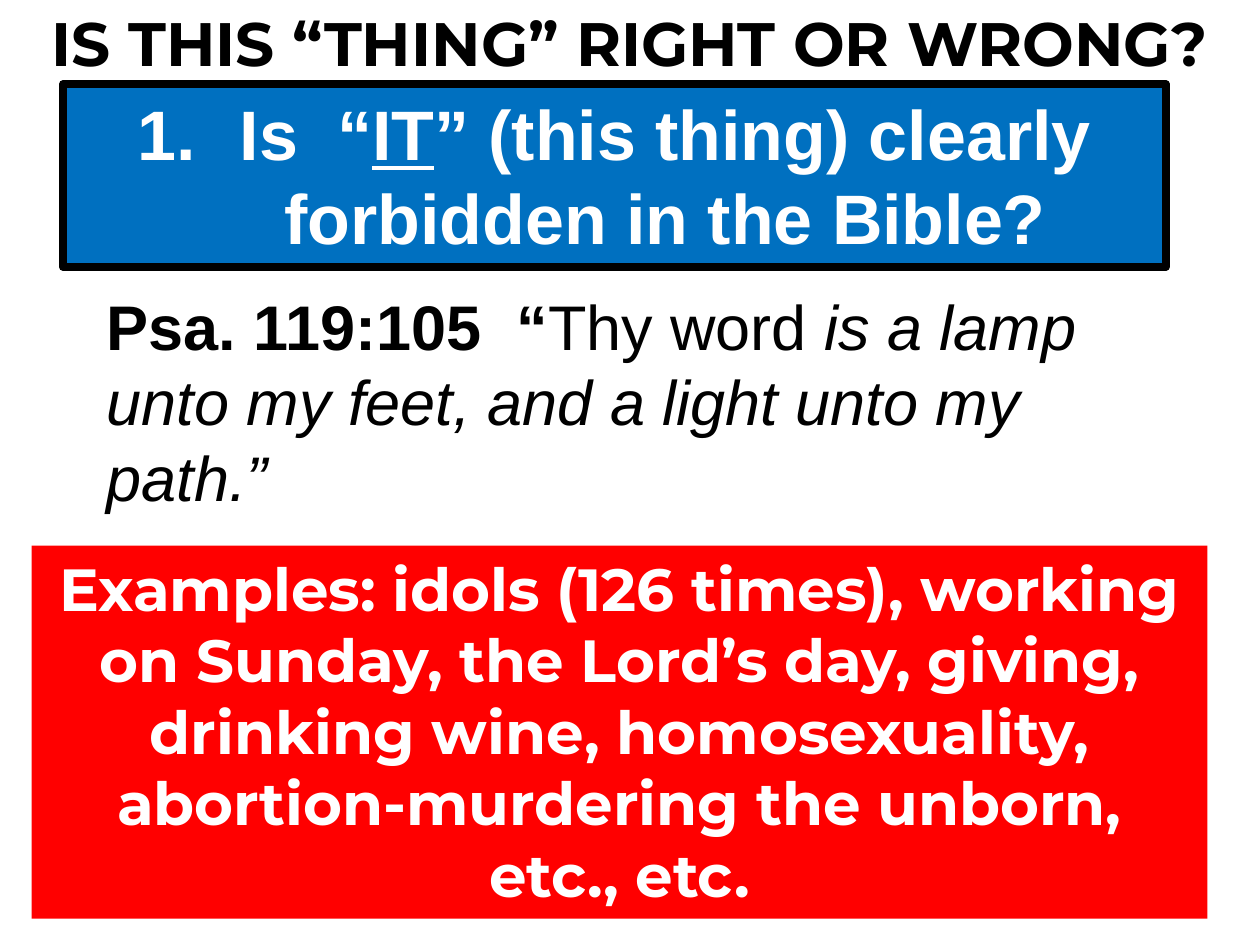
import pptx
import pptx.util
import pptx.dml.color
import pptx.enum.shapes
import pptx.enum.text
from lxml import etree

Cm, Pt = pptx.util.Cm, pptx.util.Pt
ALIGN = pptx.enum.text.PP_ALIGN
ANCHOR = pptx.enum.text.MSO_ANCHOR
RECTANGLE = pptx.enum.shapes.MSO_SHAPE.RECTANGLE
COLORS = {"black": "000000", "white": "FFFFFF", "red": "FF0000", "blue": "0070C0"}


def color(name):
    return pptx.dml.color.RGBColor.from_string(COLORS[name])


def write(part, box, frame_format, align, font, runs):
    """Place a part and fill its one paragraph with formatted runs."""
    for side, length in zip(("left", "top", "width", "height"), box):
        setattr(part, side, Cm(length))
    frame = part.text_frame
    for attribute, value in frame_format.items():
        setattr(frame, attribute, value)
    paragraph = frame.paragraphs[0]
    paragraph.alignment = align
    for words, style in runs:
        run = paragraph.add_run()
        run.text = words
        for attribute, value in {"name": font["name"], "size": Pt(font["size"]), **style}.items():
            setattr(run.font, attribute, value)
        run.font.color.rgb = color(font["color"])
    return paragraph


presentation = pptx.Presentation()
presentation.slide_width, presentation.slide_height = Cm(25.4), Cm(19.05)
slide = presentation.slides.add_slide(presentation.slide_layouts[1])
BOLD = {"bold": True}
margins = {"margin_left": Cm(0.25), "margin_right": Cm(0.25),
           "margin_top": Cm(0.13), "margin_bottom": Cm(0.13)}
top_text = {"word_wrap": True, "auto_size": pptx.enum.text.MSO_AUTO_SIZE.NONE,
            "vertical_anchor": ANCHOR.TOP, **margins}
middle_text = {**top_text, "vertical_anchor": ANCHOR.MIDDLE}

# Heading
write(slide.shapes.title, (0, 0, 25.4, 1.7), middle_text, ALIGN.CENTER,
      {"name": "Montserrat", "size": 35, "color": "black"},
      [("IS THIS “THING” RIGHT OR WRONG?", BOLD)])

# Scripture, without the template's bullet
verse = write(slide.placeholders[1], (1.9, 5.66, 21.6, 4.88), top_text, ALIGN.LEFT,
              {"name": "Arial", "size": 36, "color": "black"},
              [("Psa. 119:105  “", BOLD),
               ("Thy word ", {"bold": False}),
               ("is a lamp unto my feet, and a light unto my path.”",
                {"bold": False, "italic": True})])
verse.space_before = Pt(0)

# Panels: examples and question
panels = []
for fill in ("red", "blue"):
    panel = slide.shapes.add_shape(RECTANGLE, 0, 0, Cm(1), Cm(1))
    panel.shadow.inherit = False
    panel.fill.solid()
    panel.fill.fore_color.rgb = color(fill)
    panel.line.fill.background()
    panels.append(panel)
examples, question = panels

write(examples, (0.64, 11, 23.7, 7.52), top_text, ALIGN.CENTER,
      {"name": "Montserrat", "size": 34, "color": "white"},
      [("Examples: idols (126 times), working on Sunday, the Lord’s day, giving, "
        "drinking wine, homosexuality, abortion-murdering the unborn, etc., etc.", BOLD)])

question.line.color.rgb = color("black")
question.line.width = Pt(4.5)
numbered = write(question, (1.27, 1.7, 22.23, 3.68), top_text, ALIGN.CENTER,
                 {"name": "Arial", "size": 40, "color": "white"},
                 [("Is  “", BOLD),
                  ("IT", {"bold": True, "underline": True}),
                  ("” (this thing) clearly forbidden in the Bible?", BOLD)])

# Bullets and indents
for paragraph, indent, bullet, options in (
        (verse, 0, "buNone", {}),
        (numbered, 2.06, "buAutoNum", {"type": "arabicPeriod"})):
    properties = paragraph._p.get_or_add_pPr()
    properties.set("marL", str(Cm(indent)))
    properties.set("indent", str(-Cm(indent)))
    etree.SubElement(properties, pptx.oxml.ns.qn(f"a:{bullet}"), options)

presentation.save("out.pptx")
